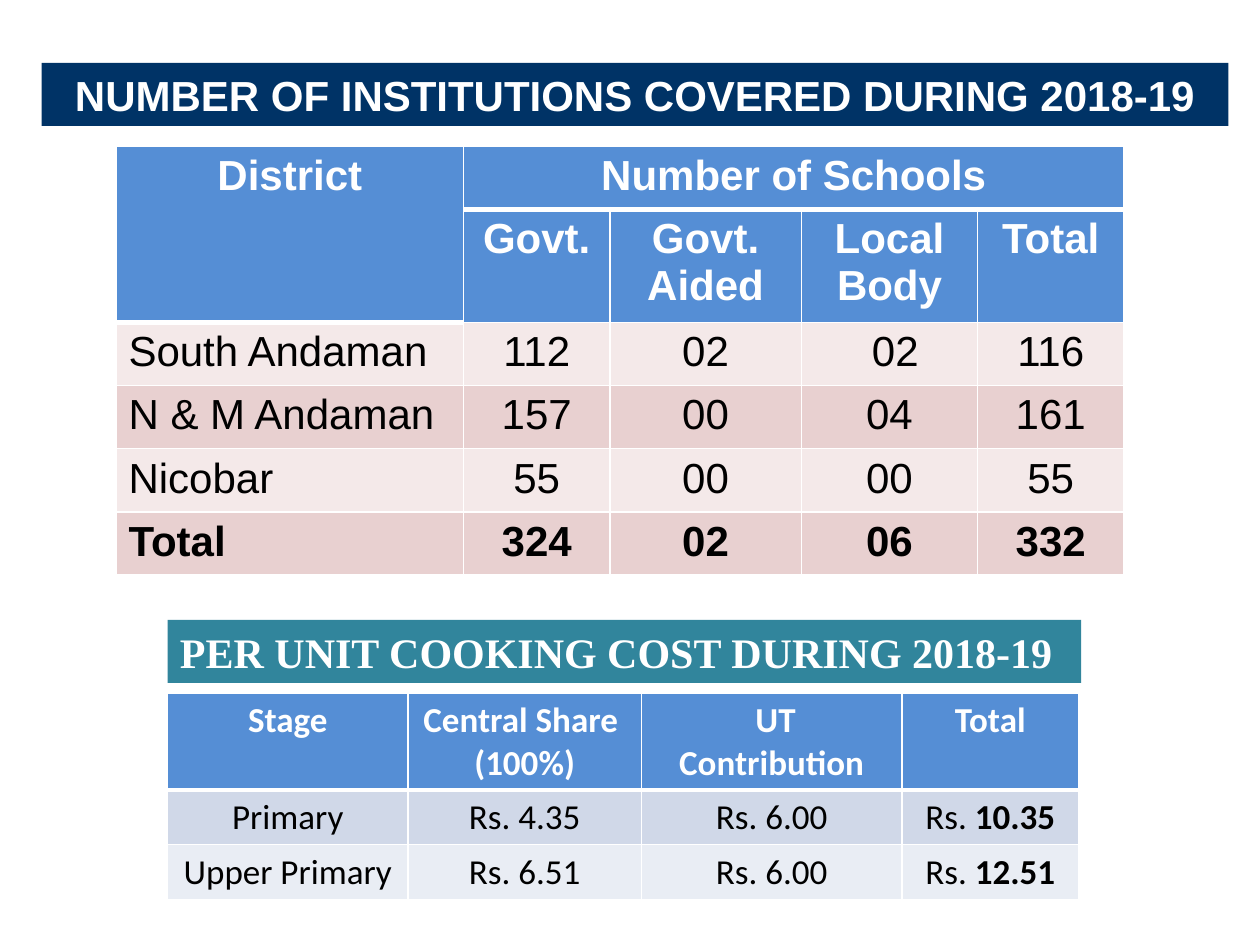
from lxml import etree
from pptx import Presentation
from pptx import util as u
from pptx.dml.color import RGBColor
from pptx.enum import shapes, text
from pptx.oxml import ns

WHITE = RGBColor(0xFF, 0xFF, 0xFF)
BLACK = RGBColor(0x00, 0x00, 0x00)
NAVY = RGBColor(0x00, 0x33, 0x66)
TEAL = RGBColor(0x31, 0x85, 0x9C)
BLUE = RGBColor(0x55, 0x8E, 0xD5)
ROSE_LIGHT = RGBColor(0xF4, 0xE9, 0xE9)
ROSE = RGBColor(0xE8, 0xD0, 0xD0)
ICE_LIGHT = RGBColor(0xE9, 0xED, 0xF4)
ICE = RGBColor(0xD0, 0xD8, 0xE8)

LEFT, CENTER = text.PP_ALIGN.LEFT, text.PP_ALIGN.CENTER

SCHOOLS = [
    ["District", "Number of Schools", "", "", ""],
    ["", "Govt.", "Govt. Aided", "Local Body", "Total"],
    ["South Andaman", "112", "02", " 02", "116"],
    ["N & M Andaman", "157", "00", "04", "161"],
    ["Nicobar", "55", "00", "00", "55"],
    ["Total", "324", "02", "06", "332"],
]
COSTS = [
    ["Stage", "Central Share \n(100%)", " UT Contribution", "Total"],
    ["Primary", "Rs. 4.35", "Rs. 6.00", ("Rs.", " 10.35")],
    ["Upper Primary", "Rs. 6.51", "Rs. 6.00", ("Rs.", " 12.51")],
]


class Deck:
    def __init__(self):
        self.prs = Presentation()
        self.prs.slide_width, self.prs.slide_height = u.Inches(10), u.Inches(7.5)
        self.s = self.prs.slides.add_slide(self.prs.slide_layouts[6])

    def style(self, p, font, size, color, bold, align):
        p.alignment = align
        p.font.name, p.font.size = font, u.Pt(size)
        p.font.color.rgb = color
        if bold is not None:
            p.font.bold = bold

    def banner(self, words, box, fill, font, align):
        sp = self.s.shapes.add_shape(
            shapes.MSO_SHAPE.RECTANGLE, *(u.Inches(v) for v in box))
        sp.shadow.inherit = False
        sp.fill.solid()
        sp.fill.fore_color.rgb = fill
        sp.line.fill.background()
        tf = sp.text_frame
        tf.word_wrap = True
        tf.auto_size = text.MSO_AUTO_SIZE.SHAPE_TO_FIT_TEXT
        tf.text = words
        self.style(tf.paragraphs[0], font, 24, WHITE, True, align)

    def borders(self, cell, top, bottom):
        pr = cell._tc.get_or_add_tcPr()
        widths = [("lnL", 1), ("lnR", 1), ("lnT", top), ("lnB", bottom)]
        for i, (tag, width) in enumerate(widths):
            ln = etree.Element(ns.qn("a:" + tag), w=str(u.Pt(width)))
            fill = etree.SubElement(ln, ns.qn("a:solidFill"))
            etree.SubElement(fill, ns.qn("a:srgbClr"), val=str(WHITE))
            pr.insert(i, ln)

    def table(self, rows, left, top, widths, heights, font, size,
              bands, headers=1, spans=(), bold_rows=(), first_align=CENTER):
        frame = self.s.shapes.add_table(
            len(rows), len(widths), u.Inches(left), u.Inches(top),
            u.Inches(sum(widths)), u.Inches(sum(heights)))
        tbl = frame.table
        for col, width in zip(tbl.columns, widths):
            col.width = u.Inches(width)
        for row, height in zip(tbl.rows, heights):
            row.height = u.Inches(height)
        for start, end in spans:
            tbl.cell(*start).merge(tbl.cell(*end))
        for i, row in enumerate(rows):
            header = i < headers
            color = WHITE if header else BLACK
            bold = header or i in bold_rows
            for j, value in enumerate(row):
                cell = tbl.cell(i, j)
                cell.fill.solid()
                cell.fill.fore_color.rgb = BLUE if header else bands[(i - headers) % 2]
                self.borders(cell, 3 if i == 1 else 1, 3 if i == 0 else 1)
                if cell.is_spanned:
                    continue
                align = first_align if j == 0 and not header else CENTER
                tf = cell.text_frame
                if isinstance(value, tuple):
                    p = tf.paragraphs[0]
                    for part, strong in zip(value, (False, True)):
                        r = p.add_run()
                        r.text, r.font.bold = part, strong
                    self.style(p, font, size, color, None, align)
                else:
                    tf.text = value
                    for p in tf.paragraphs:
                        self.style(p, font, size, color, bold, align)


def main():
    deck = Deck()
    deck.banner("PER UNIT COOKING COST DURING 2018-19", (1.33, 4.92, 7.25, 0.5),
                TEAL, "Times New Roman", LEFT)
    deck.table(COSTS, 1.33, 5.5, [1.91, 1.85, 2.07, 1.4], [0.77, 0.43, 0.43],
               "Calibri", 20, (ICE, ICE_LIGHT))
    deck.banner("NUMBER OF INSTITUTIONS COVERED DURING 2018-19", (0.33, 0.5, 9.42, 0.5),
                NAVY, "Arial", CENTER)
    deck.table(SCHOOLS, 0.92, 1.16, [2.76, 1.16, 1.52, 1.4, 1.16],
               [0.5, 0.9] + [0.5] * 4, "Arial", 24, (ROSE_LIGHT, ROSE), headers=2,
               spans=[((0, 0), (1, 0)), ((0, 1), (0, 4))], bold_rows=(5,),
               first_align=LEFT)
    deck.prs.save("out.pptx")


if __name__ == "__main__":
    main()
